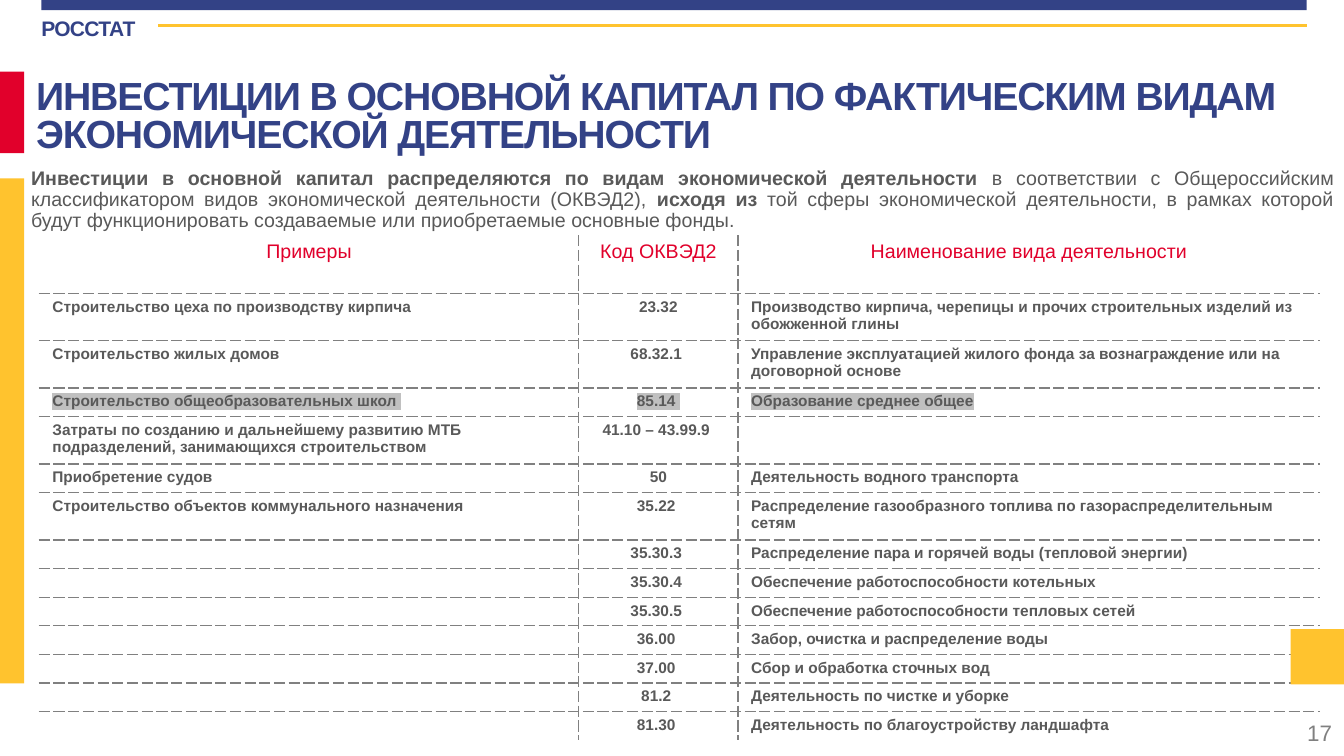
from lxml import etree
from pptx import Presentation
from pptx.dml.color import RGBColor
from pptx.enum.shapes import MSO_CONNECTOR, MSO_SHAPE
from pptx.enum.text import MSO_ANCHOR, PP_ALIGN
from pptx.oxml.ns import qn
from pptx.util import Inches, Pt

NAVY = RGBColor(0x33, 0x42, 0x86)
RED = RGBColor(0xE1, 0x00, 0x2B)
YELLOW = RGBColor(0xFF, 0xC3, 0x2E)
TEXT_GRAY = RGBColor(0x59, 0x59, 0x59)
LINE_GRAY = RGBColor(0x80, 0x80, 0x80)
HIGHLIGHT = RGBColor(0xC0, 0xC0, 0xC0)
FONT = "Arial"

RECTANGLE = MSO_SHAPE.RECTANGLE
STRAIGHT = MSO_CONNECTOR.STRAIGHT
LEFT, CENTER, RIGHT, JUSTIFY = (
    PP_ALIGN.LEFT, PP_ALIGN.CENTER, PP_ALIGN.RIGHT, PP_ALIGN.JUSTIFY)
TOP, MIDDLE = MSO_ANCHOR.TOP, MSO_ANCHOR.MIDDLE

INTRO = [
    ("Инвестиции в основной капитал распределяются по видам экономической деятельности", True),
    (" в соответствии с Общероссийским классификатором видов экономической "
     "деятельности (ОКВЭД2), ", False),
    ("исходя из ", True),
    ("той сферы экономической деятельности, в рамках которой будут функционировать "
     "создаваемые или приобретаемые основные фонды.", False),
]

COLUMN_WIDTHS = (5.35, 1.58, 5.77)
HEADER_HEIGHT, SINGLE_HEIGHT, DOUBLE_HEIGHT = 0.57, 0.28, 0.47
HEADERS = ("Примеры", "Код ОКВЭД2", "Наименование вида деятельности")
HIGHLIGHTED_CODE = "85.14 "
ACTIVITIES = [
    (DOUBLE_HEIGHT, "Строительство цеха по производству кирпича", "23.32",
     "Производство кирпича, черепицы и прочих строительных изделий из обожженной глины"),
    (DOUBLE_HEIGHT, "Строительство жилых домов", "68.32.1 ",
     "Управление эксплуатацией жилого фонда за вознаграждение или на договорной основе"),
    (SINGLE_HEIGHT, "Строительство общеобразовательных школ ", HIGHLIGHTED_CODE,
     "Образование среднее общее"),
    (DOUBLE_HEIGHT, "Затраты по созданию и дальнейшему развитию МТБ\n"
     "подразделений, занимающихся строительством", "41.10 – 43.99.9 ", ""),
    (SINGLE_HEIGHT, "Приобретение судов", "50", "Деятельность водного транспорта"),
    (DOUBLE_HEIGHT, "Строительство объектов коммунального назначения", "35.22 ",
     "Распределение газообразного топлива по газораспределительным сетям"),
    (SINGLE_HEIGHT, "", "35.30.3 ", "Распределение пара и горячей воды (тепловой энергии)"),
    (SINGLE_HEIGHT, "", "35.30.4 ", "Обеспечение работоспособности котельных"),
    (SINGLE_HEIGHT, "", "35.30.5 ", "Обеспечение работоспособности тепловых сетей"),
    (SINGLE_HEIGHT, "", "36.00 ", "Забор, очистка и распределение воды"),
    (SINGLE_HEIGHT, "", "37.00 ", "Сбор и обработка сточных вод"),
    (SINGLE_HEIGHT, "", "81.2 ", "Деятельность по чистке и уборке"),
    (SINGLE_HEIGHT, "", "81.30 ", "Деятельность по благоустройству ландшафта"),
]


def write_text(frame, text, size, color, bold=False, align=LEFT, line_spacing=None,
               tracking=None, highlight=None):
    """Fill a text frame from a string, or from (text, bold) pairs for one paragraph."""
    if isinstance(text, str):
        paragraphs = [[(line, bold)] for line in text.split("\n")]
    else:
        paragraphs = [text]
    for index, fragments in enumerate(paragraphs):
        paragraph = frame.add_paragraph() if index else frame.paragraphs[0]
        paragraph.alignment = align
        if line_spacing:
            paragraph.line_spacing = line_spacing
        for fragment, is_bold in fragments:
            if not fragment:
                etree.SubElement(paragraph._p, qn("a:endParaRPr"), sz=str(size * 100))
                continue
            run = paragraph.add_run()
            run.text = fragment
            run.font.size = Pt(size)
            run.font.bold = is_bold
            run.font.color.rgb = color
            properties = run._r.get_or_add_rPr()
            if highlight is not None:
                mark = etree.SubElement(properties, qn("a:highlight"))
                etree.SubElement(mark, qn("a:srgbClr"), val=str(highlight))
            if tracking:
                properties.set("spc", str(round(tracking * 100)))
            run.font.name = FONT


def add_text(slide, left, top, width, height, text, insets=(0.1, 0.05), anchor=TOP, **text_format):
    box = slide.shapes.add_textbox(Inches(left), Inches(top), Inches(width), Inches(height))
    frame = box.text_frame
    frame.word_wrap = True
    frame.vertical_anchor = anchor
    frame.margin_left = frame.margin_right = Inches(insets[0])
    frame.margin_top = frame.margin_bottom = Inches(insets[1])
    write_text(frame, text, **text_format)


def add_block(slide, left, top, width, height, color):
    block = slide.shapes.add_shape(
        RECTANGLE, Inches(left), Inches(top), Inches(width), Inches(height))
    block.shadow.inherit = False
    block.fill.solid()
    block.fill.fore_color.rgb = color
    block.line.fill.background()


def add_header(slide, left, top, width):
    add_block(slide, left, top, width, 0.1, NAVY)
    add_text(slide, left, top + 0.13, 1.15, 0.32, "РОССТАТ", insets=(0, 0.02),
             size=15, color=NAVY, bold=True, tracking=-0.5)
    rule_top = Inches(top + 0.25)
    rule = slide.shapes.add_connector(
        STRAIGHT, Inches(left + 1.16), rule_top, Inches(left + width), rule_top)
    rule.line.color.rgb = YELLOW
    rule.line.width = Pt(2)
    etree.SubElement(rule._element.spPr, qn("a:effectLst"))


def add_side_marks(slide, top, width):
    add_block(slide, 0, top, width, 0.81, RED)
    add_block(slide, 0, top + 1.06, width, 5.01, YELLOW)


def add_heading(slide, left, top, width):
    add_text(slide, left + 0.05, top, width - 0.05, 0.85,
             "ИНВЕСТИЦИИ В ОСНОВНОЙ КАПИТАЛ ПО ФАКТИЧЕСКИМ ВИДАМ "
             "ЭКОНОМИЧЕСКОЙ ДЕЯТЕЛЬНОСТИ",
             size=28, color=NAVY, bold=True, line_spacing=0.8, tracking=-0.8)
    add_text(slide, left, top + 0.87, width, 0.74, INTRO,
             size=14, color=TEXT_GRAY, align=JUSTIFY, line_spacing=0.9)


def set_cell_borders(cell, sides):
    """Draw dashed lines on the given sides, listed in the order L, R, T, B."""
    properties = cell._tc.get_or_add_tcPr()
    for position, side in enumerate(sides):
        line = etree.Element(qn(f"a:ln{side}"), w=str(Pt(1)))
        fill = etree.SubElement(line, qn("a:solidFill"))
        etree.SubElement(fill, qn("a:srgbClr"), val=str(LINE_GRAY))
        etree.SubElement(line, qn("a:prstDash"), val="lgDash")
        properties.insert(position, line)


def add_activity_table(slide, left, top):
    rows = [(HEADER_HEIGHT, *HEADERS), *ACTIVITIES]
    last_row, last_column = len(rows) - 1, len(COLUMN_WIDTHS) - 1
    table = slide.shapes.add_table(
        len(rows), len(COLUMN_WIDTHS), Inches(left), Inches(top),
        Inches(sum(COLUMN_WIDTHS)), Inches(sum(row[0] for row in rows))).table
    table.first_row = table.horz_banding = False
    for column, width in zip(table.columns, COLUMN_WIDTHS):
        column.width = Inches(width)
    for row_index, (height, *texts) in enumerate(rows):
        table.rows[row_index].height = Inches(height)
        is_header = row_index == 0
        highlight = HIGHLIGHT if HIGHLIGHTED_CODE in texts else None
        for column_index, text in enumerate(texts):
            cell = table.cell(row_index, column_index)
            cell.margin_left = cell.margin_right = Inches(0.13)
            cell.margin_top = cell.margin_bottom = Inches(0.05)
            cell.fill.background()
            inner_sides = {"L": column_index > 0, "R": column_index < last_column,
                           "T": row_index > 0, "B": row_index < last_row}
            set_cell_borders(cell, [side for side, inner in inner_sides.items() if inner])
            write_text(cell.text_frame, text, size=14 if is_header else 11,
                       color=RED if is_header else TEXT_GRAY, bold=not is_header,
                       align=CENTER if is_header or column_index == 1 else LEFT,
                       highlight=highlight)


def add_footer(slide, right, top):
    add_block(slide, right - 0.53, top, 0.53, 0.55, YELLOW)
    add_text(slide, right - 3.02, top + 0.83, 3, 0.4, "17", anchor=MIDDLE,
             size=16, color=LINE_GRAY, align=RIGHT)


def main():
    presentation = Presentation()
    presentation.slide_width = Inches(13.33)
    presentation.slide_height = Inches(7.5)
    slide = presentation.slides.add_slide(presentation.slide_layouts[6])
    add_header(slide, 0.41, 0, 12.55)
    add_side_marks(slide, 0.71, 0.24)
    add_heading(slide, 0.21, 0.75, 13.12)
    add_activity_table(slide, 0.39, 2.34)
    add_footer(slide, 13.33, 6.24)
    presentation.save("out.pptx")


if __name__ == "__main__":
    main()
